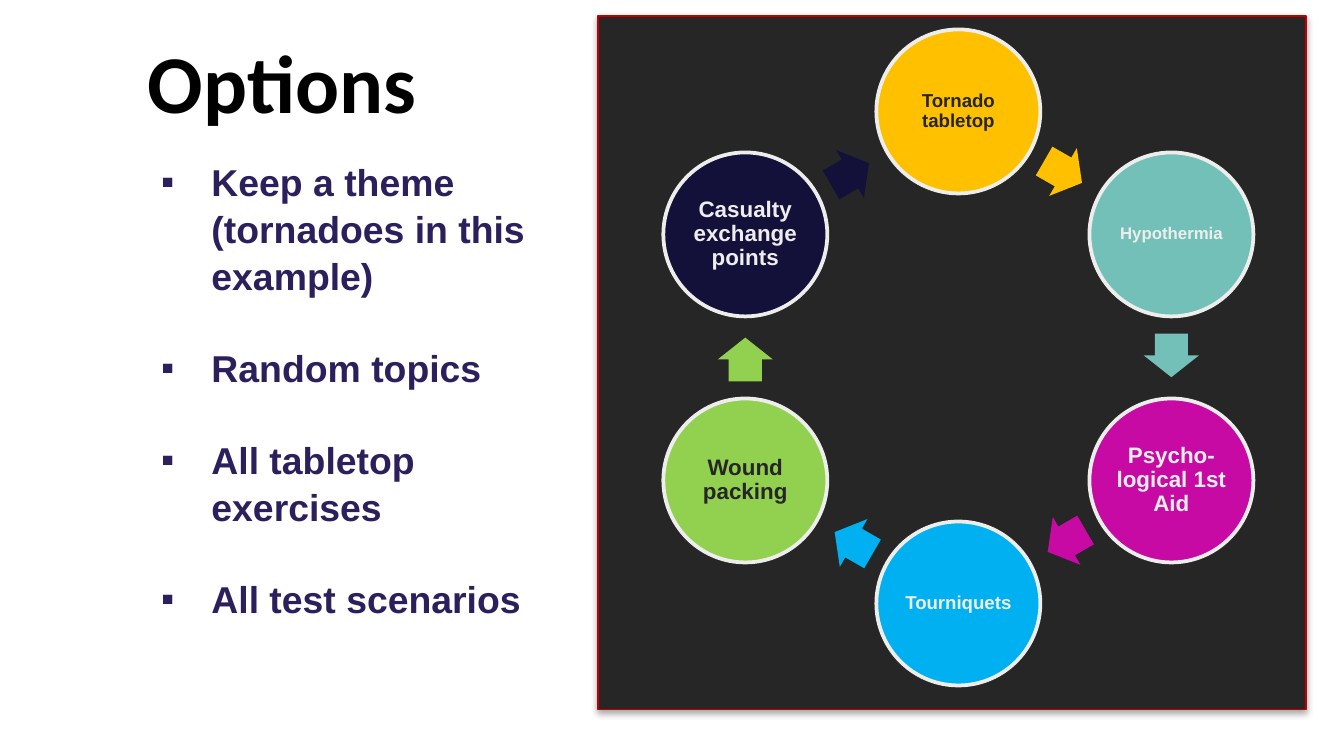
from math import cos, radians, sin

from lxml.etree import SubElement
from pptx import Presentation
from pptx.dml.color import RGBColor
from pptx.enum.shapes import MSO_SHAPE
from pptx.enum.text import MSO_ANCHOR, PP_ALIGN
from pptx.oxml import parse_xml
from pptx.oxml.ns import nsdecls, qn
from pptx.util import Pt

BLACK = RGBColor(0x00, 0x00, 0x00)
CHARCOAL = RGBColor(0x26, 0x26, 0x26)
PALE = RGBColor(0xED, 0xED, 0xEC)
RED = RGBColor(0xC0, 0x00, 0x00)
INDIGO = RGBColor(0x2B, 0x20, 0x5C)
NAVY = RGBColor(0x13, 0x10, 0x3A)
AMBER = RGBColor(0xFF, 0xC0, 0x00)
TEAL = RGBColor(0x73, 0xC0, 0xB9)
MAGENTA = RGBColor(0xC8, 0x0A, 0xA4)
BLUE = RGBColor(0x00, 0xB0, 0xF0)
GREEN = RGBColor(0x92, 0xD0, 0x50)

CENTER_X, CENTER_Y = 513.4, 191.5
CIRCLE_ORBIT, CIRCLE_SIZE = 131.8, 87.84
ARROW_ORBIT, ARROW_BACK = 114.1, 1.1
ARROW_WIDTH, ARROW_HEIGHT = 23.4, 29.6

STATIONS = [
    ("Tornado tabletop", 10, AMBER, CHARCOAL),
    ("Hypothermia", 9, TEAL, PALE),
    ("Psycho-logical 1st Aid", 12, MAGENTA, PALE),
    ("Tourniquets", 10, BLUE, PALE),
    ("Wound packing", 12, GREEN, CHARCOAL),
    ("Casualty exchange points", 12, NAVY, PALE),
]
OPTIONS = [
    "Keep a theme (tornadoes in this example)",
    "Random topics",
    "All tabletop exercises",
    "All test scenarios",
]


def style_font(font, name, size, color):
    """Apply a bold typeface, size and colour."""
    font.name = name
    font.size = Pt(size)
    font.bold = True
    font.color.rgb = color


def add_filled_shape(slide, kind, left, top, width, height, fill):
    """Add a flat preset shape with a solid fill and no outline."""
    shape = slide.shapes.add_shape(kind, Pt(left), Pt(top), Pt(width), Pt(height))
    shape.shadow.inherit = False
    shape.fill.solid()
    shape.fill.fore_color.rgb = fill
    shape.line.fill.background()
    return shape


def set_outline(shape, color, width):
    """Give a shape a solid outline."""
    shape.line.color.rgb = color
    shape.line.width = Pt(width)


def add_panel(slide):
    """Add the dark panel with its soft shadow."""
    panel = add_filled_shape(slide, MSO_SHAPE.RECTANGLE, 320.4, 8.6, 379.4, 371.5, CHARCOAL)
    set_outline(panel, RED, 0.75)
    effects = panel.element.spPr.find(qn("a:effectLst"))
    effects.append(parse_xml(
        f'<a:outerShdw {nsdecls("a")} blurRad="{Pt(3.1)}" dist="{Pt(1.8)}" dir="5400000" '
        'rotWithShape="0"><a:srgbClr val="000000"><a:alpha val="35000"/></a:srgbClr></a:outerShdw>'
    ))


def add_station(slide, angle, text, size, fill, color):
    """Add a labelled circle at an angle on the cycle."""
    left = CENTER_X + CIRCLE_ORBIT * cos(angle) - CIRCLE_SIZE / 2
    top = CENTER_Y + CIRCLE_ORBIT * sin(angle) - CIRCLE_SIZE / 2
    circle = add_filled_shape(slide, MSO_SHAPE.OVAL, left, top, CIRCLE_SIZE, CIRCLE_SIZE, fill)
    set_outline(circle, PALE, 2)
    frame = circle.text_frame
    frame.word_wrap = True
    frame.vertical_anchor = MSO_ANCHOR.MIDDLE
    frame.margin_left = frame.margin_right = Pt(size / 10)
    frame.margin_top = frame.margin_bottom = Pt(size / 10)
    frame.text = text
    paragraph = frame.paragraphs[0]
    paragraph.alignment = PP_ALIGN.CENTER
    paragraph.line_spacing = 0.9
    style_font(paragraph.runs[0].font, "Arial", size, color)


def add_cycle_arrow(slide, angle, rotation, fill):
    """Add an arrow between two circles, pointing along the cycle."""
    heading = radians(rotation)
    x = CENTER_X + ARROW_ORBIT * cos(angle) - ARROW_BACK * cos(heading)
    y = CENTER_Y + ARROW_ORBIT * sin(angle) - ARROW_BACK * sin(heading)
    arrow = add_filled_shape(slide, MSO_SHAPE.RIGHT_ARROW, x - ARROW_WIDTH / 2,
                             y - ARROW_HEIGHT / 2, ARROW_WIDTH, ARROW_HEIGHT, fill)
    arrow.adjustments[0] = 0.6
    arrow.adjustments[1] = 0.5
    arrow.rotation = rotation


def add_cycle(slide):
    """Add the six stations and the arrows that join them."""
    for index, (text, size, fill, color) in enumerate(STATIONS):
        degrees = 60 * index - 90
        add_station(slide, radians(degrees), text, size, fill, color)
        add_cycle_arrow(slide, radians(degrees + 30), 60 * index + 30, fill)


def add_text_frame(slide, left, top, width, height):
    """Add a wrapping text box and return its text frame."""
    box = slide.shapes.add_textbox(Pt(left), Pt(top), Pt(width), Pt(height))
    box.text_frame.word_wrap = True
    return box.text_frame


def add_title(slide):
    """Add the centred slide title."""
    frame = add_text_frame(slide, 5, 9.4, 292.3, 67.7)
    frame.vertical_anchor = MSO_ANCHOR.MIDDLE
    frame.text = "Options"
    paragraph = frame.paragraphs[0]
    paragraph.alignment = PP_ALIGN.CENTER
    style_font(paragraph.runs[0].font, "Calibri", 44, BLACK)


def add_options(slide):
    """Add the bulleted list of options."""
    frame = add_text_frame(slide, 79.2, 80.6, 235.4, 249.8)
    frame.text = "\n".join(OPTIONS)
    for index, paragraph in enumerate(frame.paragraphs):
        paragraph.line_spacing = 1.05
        if index:
            paragraph.space_before = Pt(24)
        properties = paragraph._p.get_or_add_pPr()
        properties.set("marL", str(Pt(27)))
        properties.set("indent", str(Pt(-27)))
        SubElement(properties, qn("a:buFont"), typeface="Arial")
        SubElement(properties, qn("a:buChar"), char="▪")
        style_font(paragraph.runs[0].font, "Arial", 20, INDIGO)


def main():
    """Build and save the slide."""
    presentation = Presentation()
    presentation.slide_width = Pt(720)
    presentation.slide_height = Pt(405)
    slide = presentation.slides.add_slide(presentation.slide_layouts[6])
    add_title(slide)
    add_panel(slide)
    add_cycle(slide)
    add_options(slide)
    presentation.save("out.pptx")


if __name__ == "__main__":
    main()
